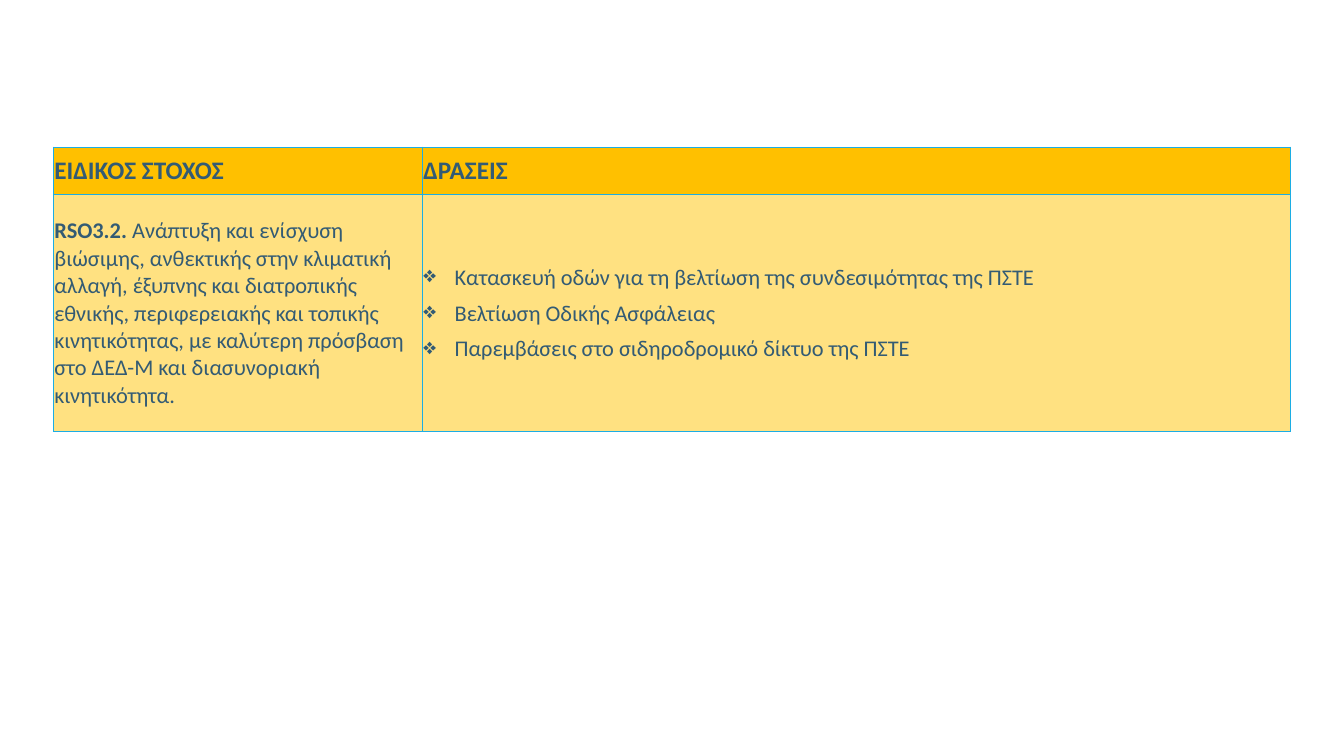
from lxml.etree import SubElement
from pptx import Presentation
from pptx.dml.color import RGBColor
from pptx.enum.text import MSO_ANCHOR
from pptx.oxml.ns import qn
from pptx.util import Emu, Pt

PX = 9144
TEXT = RGBColor(0x33, 0x5B, 0x74)
HEADER = RGBColor(0xFF, 0xC0, 0x00)
BODY = RGBColor(0xFF, 0xE1, 0x81)
BORDER = RGBColor(0x1C, 0xAD, 0xE4)

HEADINGS = ["ΕΙΔΙΚΟΣ ΣΤΟΧΟΣ", "ΔΡΑΣΕΙΣ"]
OBJECTIVE_CODE = "RSO3.2. "
OBJECTIVE = (
    "Ανάπτυξη και ενίσχυση βιώσιμης, ανθεκτικής στην κλιματική αλλαγή, "
    "έξυπνης και διατροπικής εθνικής, περιφερειακής και τοπικής κινητικότητας, "
    "με καλύτερη πρόσβαση στο ΔΕΔ-Μ και διασυνοριακή κινητικότητα."
)
ACTIONS = [
    "Κατασκευή οδών για τη βελτίωση της συνδεσιμότητας της ΠΣΤΕ",
    "Βελτίωση Οδικής Ασφάλειας",
    "Παρεμβάσεις στο σιδηροδρομικό δίκτυο της ΠΣΤΕ",
]


def px(length):
    return Emu(length * PX)


class SlideBuilder:
    font = "Calibri"
    bullet = "❖"
    indent = 31

    def __init__(self, slide):
        self.slide = slide

    def table(self, left, top, widths, heights):
        table = self.slide.shapes.add_table(
            len(heights), len(widths),
            px(left), px(top), px(sum(widths)), px(sum(heights)),
        ).table
        for column, width in zip(table.columns, widths):
            column.width = px(width)
        for row, height in zip(table.rows, heights):
            row.height = px(height)
        return table

    def cell(self, cell, color):
        cell.vertical_anchor = MSO_ANCHOR.MIDDLE
        cell.margin_left = cell.margin_right = cell.margin_top = px(1)
        cell.margin_bottom = 0
        properties = cell._tc.get_or_add_tcPr()
        for side in ("a:lnL", "a:lnR", "a:lnT", "a:lnB"):
            line = SubElement(properties, qn(side), w=str(Pt(1)))
            fill = SubElement(line, qn("a:solidFill"))
            SubElement(fill, qn("a:srgbClr"), val=str(BORDER))
        cell.fill.solid()
        cell.fill.fore_color.rgb = color

    def format_run(self, run, size, bold=False):
        run.font.name = self.font
        run.font.size = Pt(size)
        run.font.bold = bold
        run.font.color.rgb = TEXT

    def heading(self, cell, text):
        self.cell(cell, HEADER)
        cell.text_frame.text = text
        self.format_run(cell.text_frame.paragraphs[0].runs[0], 18, True)

    def objective(self, cell, code, text):
        self.cell(cell, BODY)
        paragraph = cell.text_frame.paragraphs[0]
        for part, bold in ((code, True), (text, False)):
            run = paragraph.add_run()
            run.text = part
            self.format_run(run, 16, bold)

    def bullets(self, cell, items):
        self.cell(cell, BODY)
        cell.text_frame.text = "\n".join(items)
        for index, paragraph in enumerate(cell.text_frame.paragraphs):
            properties = paragraph._p.get_or_add_pPr()
            properties.set("marL", str(px(self.indent)))
            properties.set("indent", str(px(-self.indent)))
            SubElement(properties, qn("a:buChar"), char=self.bullet)
            if index:
                paragraph.space_before = Pt(6)
            self.format_run(paragraph.runs[0], 16)


def main():
    presentation = Presentation()
    presentation.slide_width = px(1333)
    presentation.slide_height = px(750)
    builder = SlideBuilder(
        presentation.slides.add_slide(presentation.slide_layouts[6])
    )
    goals = builder.table(53, 146, widths=[366, 861], heights=[47, 235])
    for column, heading in enumerate(HEADINGS):
        builder.heading(goals.cell(0, column), heading)
    builder.objective(goals.cell(1, 0), OBJECTIVE_CODE, OBJECTIVE)
    builder.bullets(goals.cell(1, 1), ACTIONS)
    presentation.save("out.pptx")


if __name__ == "__main__":
    main()
